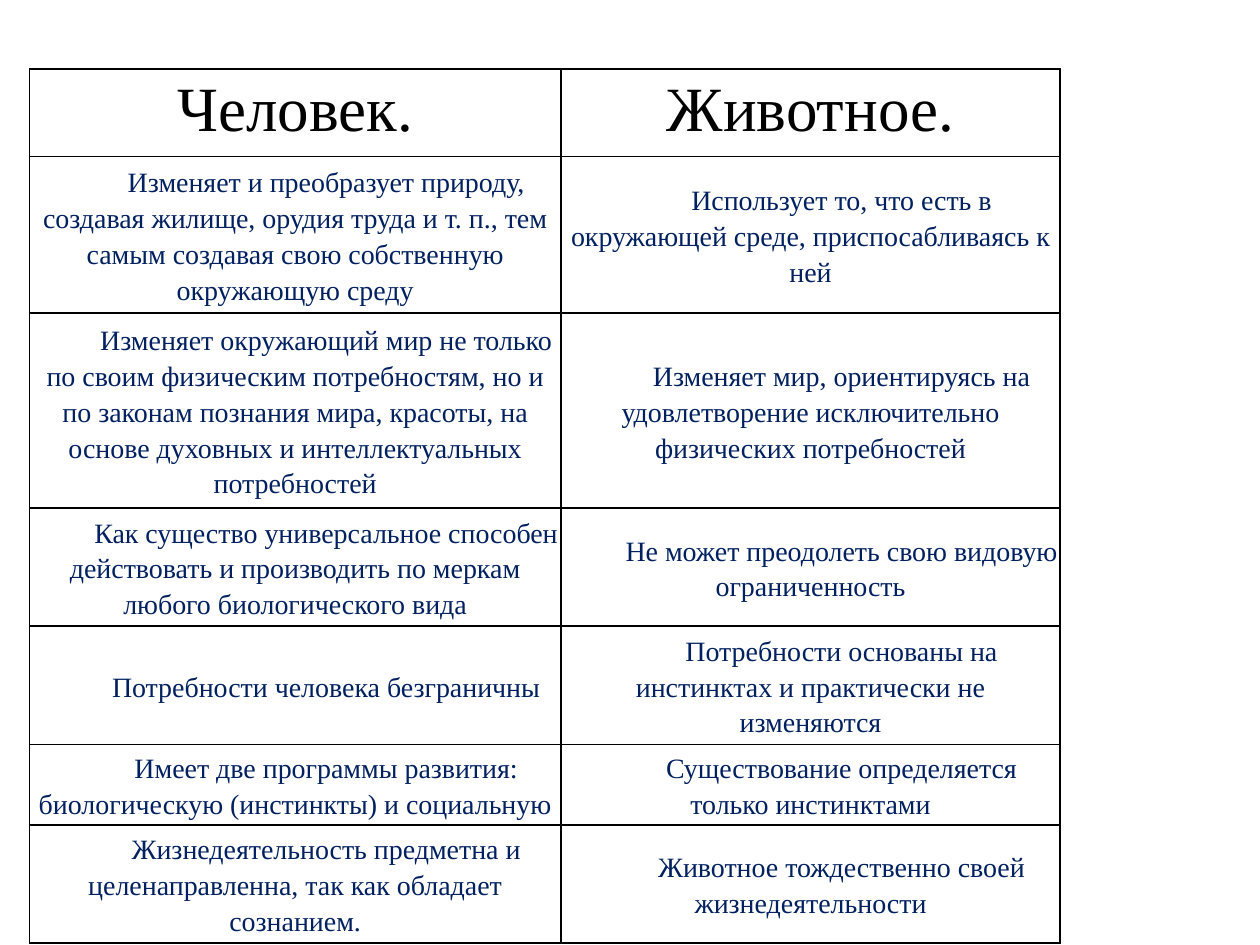
from dataclasses import dataclass

from lxml.etree import SubElement
from pptx import Presentation
from pptx.dml.color import RGBColor
from pptx.enum.text import MSO_ANCHOR as Anchor, PP_ALIGN as Align
from pptx.oxml.ns import qn
from pptx.util import Pt


@dataclass(frozen=True)
class Theme:
    font: str = "Times New Roman"
    head_size: int = 36
    body_size: int = 16
    head_color: str = "000000"
    body_color: str = "002060"
    border: str = "000000"


THEME = Theme()
COLUMN_WIDTHS = (303.8, 285.2)
ROW_HEIGHTS = (50, 89.5, 111.5, 67.5, 67.5, 46, 67.5)
HEADINGS = ("Человек.", "Животное.")
COMPARISONS = [
    ("Изменяет и преобразует природу, создавая жилище, орудия труда и т. п., "
     "тем самым создавая свою собственную окружающую среду",
     "Использует то, что есть в окружающей среде, приспосабливаясь к ней"),
    ("Изменяет окружающий мир не только по своим физическим потребностям, но и "
     "по законам познания мира, красоты, на основе духовных и интеллектуальных "
     "потребностей",
     "Изменяет мир, ориентируясь на удовлетворение исключительно физических "
     "потребностей"),
    ("Как существо универсальное способен действовать и производить по меркам "
     "любого биологического вида",
     "Не может преодолеть свою видовую ограниченность"),
    ("Потребности человека безграничны",
     "Потребности основаны на инстинктах и практически не изменяются"),
    ("Имеет две программы развития: биологическую (инстинкты) и социальную",
     "Существование определяется только инстинктами"),
    ("Жизнедеятельность предметна и целенаправленна, так как обладает сознанием.",
     "Животное тождественно своей жизнедеятельности"),
]


def add_borders(cell):
    """Outline the cell; the lines come before its fill in the XML."""
    props = cell._tc.get_or_add_tcPr()
    for i, side in enumerate(("a:lnL", "a:lnR", "a:lnT", "a:lnB")):
        line = SubElement(props, qn(side), w=str(Pt(1)))
        fill = SubElement(line, qn("a:solidFill"))
        SubElement(fill, qn("a:srgbClr"), val=THEME.border)
        props.insert(i, line)


def fill_cell(cell, text, size, color):
    cell.fill.background()
    add_borders(cell)
    cell.text_frame.text = text
    p = cell.text_frame.paragraphs[0]
    p.alignment = Align.CENTER
    font = p.runs[0].font
    font.name, font.size, font.bold = THEME.font, Pt(size), False
    font.color.rgb = RGBColor.from_string(color)
    return p


def heading_cell(cell, text):
    fill_cell(cell, text, THEME.head_size, THEME.head_color)


def body_cell(cell, text):
    p = fill_cell(cell, text, THEME.body_size, THEME.body_color)
    p.line_spacing = 1.15
    # First-line indent
    props = p._p.get_or_add_pPr()
    props.set("marL", "0")
    props.set("indent", str(Pt(35.4)))
    cell.vertical_anchor = Anchor.MIDDLE
    cell.margin_left = cell.margin_right = Pt(0.75)
    cell.margin_top = cell.margin_bottom = Pt(0.75)


def comparison_table(s, left, top):
    rows = [HEADINGS, *COMPARISONS]
    table = s.shapes.add_table(
        len(rows), len(HEADINGS), Pt(left), Pt(top),
        Pt(sum(COLUMN_WIDTHS)), Pt(sum(ROW_HEIGHTS))).table
    table.first_row = table.horz_banding = False
    for column, width in zip(table.columns, COLUMN_WIDTHS):
        column.width = Pt(width)
    for row, height in zip(table.rows, ROW_HEIGHTS):
        row.height = Pt(height)
    for r, texts in enumerate(rows):
        write = body_cell if r else heading_cell
        for c, text in enumerate(texts):
            write(table.cell(r, c), text)


def main():
    prs = Presentation()
    prs.slide_width, prs.slide_height = Pt(720), Pt(540)
    s = prs.slides.add_slide(prs.slide_layouts[6])
    comparison_table(s, 16.8, 39.4)
    prs.save("out.pptx")


if __name__ == "__main__":
    main()
